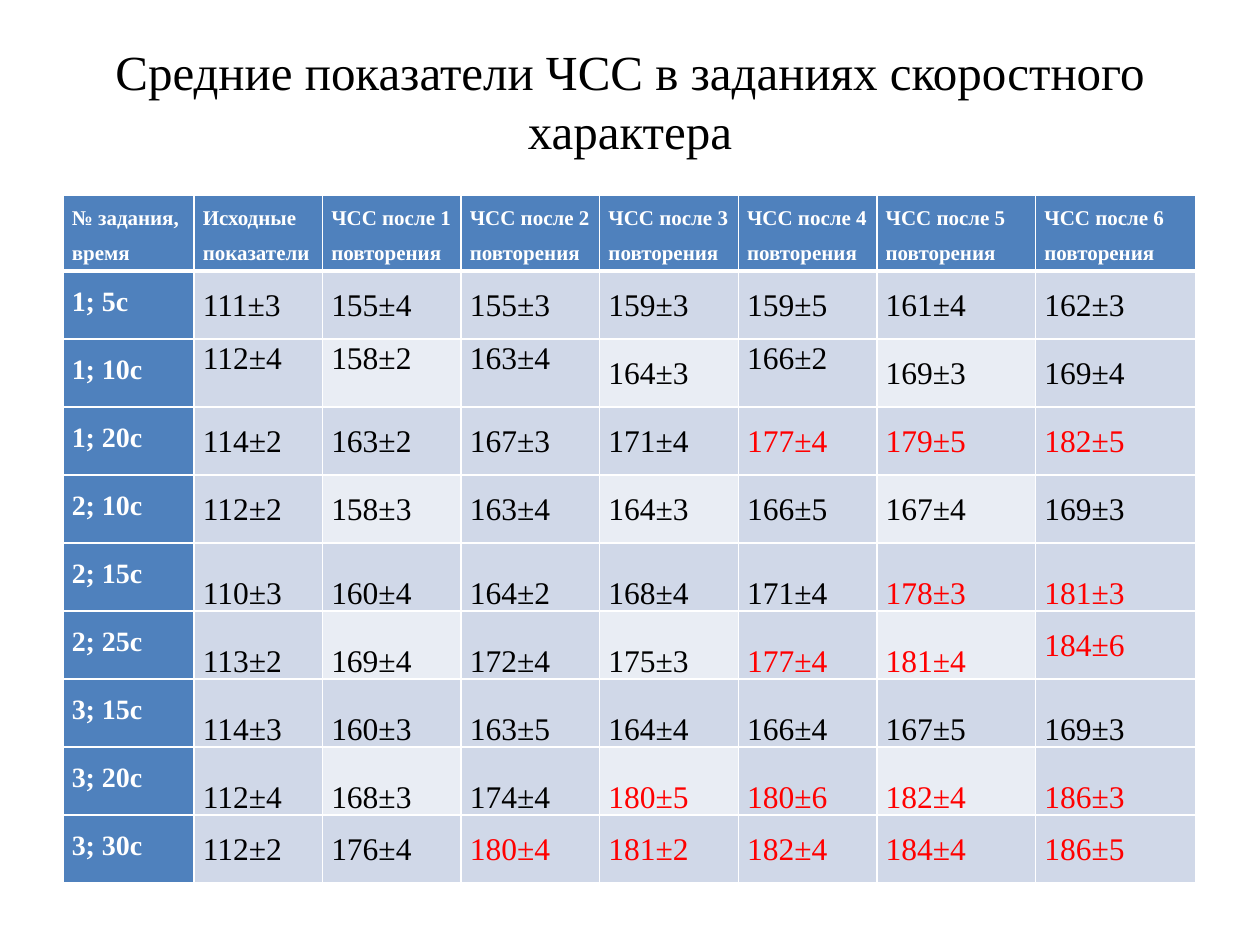
"""Build a slide with a table of mean heart rates in speed exercises."""
from lxml.etree import SubElement
from pptx import Presentation
from pptx.dml.color import RGBColor as RGB
from pptx.enum.text import MSO_ANCHOR as Anchor, PP_ALIGN as Align
from pptx.oxml.ns import qn
from pptx.util import Inches, Pt

THEME = {
    "font": "Times New Roman",
    "title": 28, "head": 12, "side": 16, "body": 18,
    "black": "000000", "white": "FFFFFF", "red": "FF0000",
    "blue": "4F81BD", "dark": "D0D8E8", "light": "E9EDF4",
}
LIMIT = 177
WIDTHS = [1.04, 1.02, 1.1, 1.1, 1.1, 1.1, 1.26, 1.27]
HEADS = ["№ задания, время", "Исходные показатели"]
HEADS += [f"ЧСС после {n} повторения" for n in range(1, 7)]
STYLES = {
    "s": (Anchor.TOP, Align.LEFT, 1.5, 0),
    "j": (Anchor.TOP, Align.JUSTIFY, 1.5, 0),
    "t": (Anchor.TOP, Align.LEFT, 1.07, 0),
    "b": (Anchor.BOTTOM, Align.LEFT, 1.07, 8),
}
ROWS = [
    ("1; 5с", "111±3 155±4 155±3 159±3 159±5 161±4 162±3", "ssjsjsj"),
    ("1; 10с", "112±4 158±2 163±4 164±3 166±2 169±3 169±4", "tttstss"),
    ("1; 20с", "114±2 163±2 167±3 171±4 177±4 179±5 182±5", "jjjjjjs"),
    ("2; 10с", "112±2 158±3 163±4 164±3 166±5 167±4 169±3", "jjjjjjs"),
    ("2; 15с", "110±3 160±4 164±2 168±4 171±4 178±3 181±3", "bbbbbbb"),
    ("2; 25с", "113±2 169±4 172±4 175±3 177±4 181±4 184±6", "bbbbbbs"),
    ("3; 15с", "114±3 160±3 163±5 164±4 166±4 167±5 169±3", "bbbbbbb"),
    ("3; 20с", "112±4 168±3 174±4 180±5 180±6 182±4 186±3", "bbbbbbb"),
    ("3; 30с", "112±2 176±4 180±4 181±2 182±4 184±4 186±5", "jjjjjjs"),
]


def write(par, text, size, color, bold=False):
    run = par.add_run()
    run.text = text
    run.font.name = THEME["font"]
    run.font.size = Pt(THEME[size])
    run.font.bold = bold
    run.font.color.rgb = RGB.from_string(THEME[color])


def edge(cell, row):
    props = cell._tc.get_or_add_tcPr()
    wide = {0: "lnB", 1: "lnT"}.get(row)
    for spot, side in enumerate(["lnL", "lnR", "lnT", "lnB"]):
        line = SubElement(props, qn(f"a:{side}"), w=str(Pt(3 if side == wide else 1)))
        fill = SubElement(line, qn("a:solidFill"))
        SubElement(fill, qn("a:srgbClr"), val=THEME["white"])
        props.insert(spot, line)


deck = Presentation()
deck.slide_width, deck.slide_height = Inches(10), Inches(7.5)
slide = deck.slides.add_slide(deck.slide_layouts[6])

title = slide.shapes.add_textbox(Inches(0.5), Inches(0.21), Inches(9), Inches(1.18))
frame = title.text_frame
frame.word_wrap = True
frame.vertical_anchor = Anchor.MIDDLE
frame.paragraphs[0].alignment = Align.CENTER
write(frame.paragraphs[0], "Средние показатели ЧСС в заданиях скоростного характера",
      "title", "black")

grid = [(HEADS, "s" * 8)]
grid += [([name] + data.split(), "s" + codes) for name, data, codes in ROWS]
table = slide.shapes.add_table(len(grid), len(WIDTHS), Inches(0.5), Inches(1.55),
                               Inches(9), Inches(5.4)).table
for col, width in zip(table.columns, WIDTHS):
    col.width = Inches(width)

for r, (texts, codes) in enumerate(grid):
    table.rows[r].height = Inches(0.54)
    for c, (text, code) in enumerate(zip(texts, codes)):
        cell = table.cell(r, c)
        cell.margin_left = cell.margin_right = Inches(0.07)
        cell.margin_top = cell.margin_bottom = 0
        par = cell.text_frame.paragraphs[0]
        cell.vertical_anchor, par.alignment, par.line_spacing, after = STYLES[code]
        par.space_after = Pt(after)
        if r == 0 or c == 0:
            back = "blue"
            write(par, text, "side" if r else "head", "white", True)
        else:
            back = "dark" if r % 2 or c % 2 else "light"
            high = int(text.split("±")[0]) >= LIMIT
            write(par, text, "body", "red" if high else "black")
        cell.fill.solid()
        cell.fill.fore_color.rgb = RGB.from_string(THEME[back])
        edge(cell, r)

deck.save("out.pptx")
